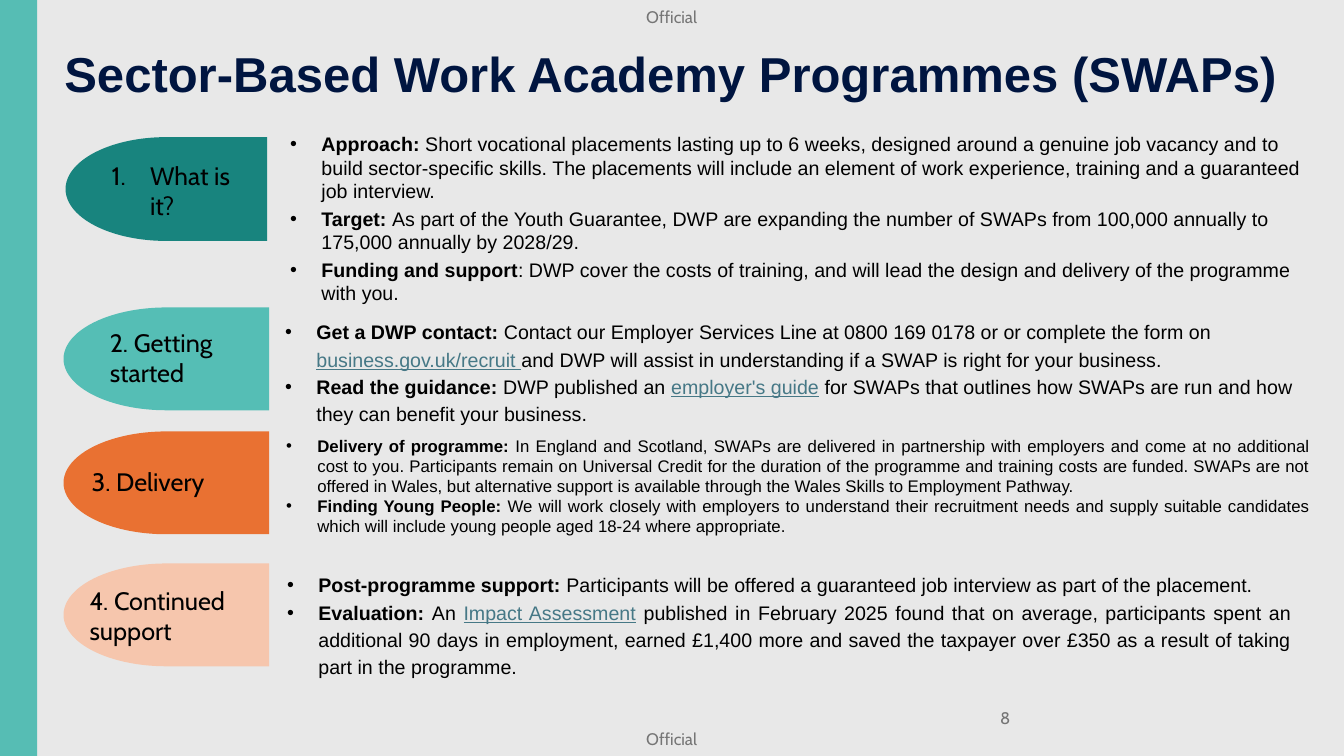
from lxml.etree import SubElement
from pptx import Presentation
from pptx.dml.color import RGBColor
from pptx.enum.shapes import MSO_SHAPE
from pptx.enum.text import MSO_ANCHOR, PP_ALIGN
from pptx.oxml.ns import qn
from pptx.util import Pt

PX = 9144  # 100 px to the inch
BACKGROUND = RGBColor(0xE8, 0xE8, 0xE8)
TEAL = RGBColor(0x56, 0xBD, 0xB4)
DARK_TEAL = RGBColor(0x18, 0x84, 0x7E)
LIGHT_TEAL = RGBColor(0x55, 0xBE, 0xB5)
ORANGE = RGBColor(0xE9, 0x71, 0x32)
PEACH = RGBColor(0xF6, 0xC6, 0xAD)
NAVY = RGBColor(0x00, 0x15, 0x40)
BLACK = RGBColor(0x00, 0x00, 0x00)
GREY = RGBColor(0x75, 0x75, 0x75)
LINK = RGBColor(0x46, 0x78, 0x86)


def add_text(box, text, font_name, size, color, inset=None):
    """Add a wrapping text box with one paragraph and return its frame."""
    textbox = slide.shapes.add_textbox(*[value * PX for value in box])
    frame = textbox.text_frame
    frame.word_wrap = True
    if inset is not None:
        frame.margin_left = frame.margin_right = inset * PX
        frame.margin_top = frame.margin_bottom = inset * PX
    frame.text = text
    font = frame.paragraphs[0].font
    font.name, font.size, font.color.rgb = font_name, Pt(size), color
    return frame


def add_bullet(paragraph, indent, tag, **attributes):
    """Give the paragraph a hanging indent and a bullet or number."""
    properties = paragraph._p.get_or_add_pPr()
    properties.set("marL", str(indent * PX))
    properties.set("indent", str(-indent * PX))
    if tag == "a:buChar":
        SubElement(properties, qn("a:buFont"), typeface="Arial")
    SubElement(properties, qn(tag), **attributes)


presentation = Presentation()
presentation.slide_width = 1333 * PX
presentation.slide_height = 750 * PX
slide = presentation.slides.add_slide(presentation.slide_layouts[6])
slide.background.fill.solid()
slide.background.fill.fore_color.rgb = BACKGROUND

# Side band and the four section tabs
for kind, box, color, rotation in [
    (MSO_SHAPE.RECTANGLE, (0, 0, 37, 750), TEAL, 0),
    (MSO_SHAPE.FLOWCHART_DELAY, (65, 136, 200, 103), DARK_TEAL, 180),
    (MSO_SHAPE.FLOWCHART_DELAY, (63, 305, 204, 102), LIGHT_TEAL, 180),
    (MSO_SHAPE.FLOWCHART_DELAY, (63, 428, 204, 102), ORANGE, 180),
    (MSO_SHAPE.FLOWCHART_DELAY, (63, 559, 204, 102), PEACH, 180),
]:
    shape = slide.shapes.add_shape(kind, *[value * PX for value in box])
    shape.rotation = rotation
    shape.shadow.inherit = False
    shape.fill.solid()
    shape.fill.fore_color.rgb = color
    shape.line.fill.background()

# Title, markings and page number
title = add_text((54, 38, 1257, 71), "Sector-Based Work Academy Programmes (SWAPs)",
                 "Arial", 35, NAVY)
title.paragraphs[0].font.bold = True
for top in (7, 723):
    add_text((641, top, 56, 20), "Official", "Cabin", 12, GREY, inset=0)
page_number = add_text((987, 692, 311, 40), "8", "Cabin", 12, GREY, inset=5)
page_number.vertical_anchor = MSO_ANCHOR.MIDDLE

# Tab labels
for box, label in [
    ((101, 154, 161, 71), "What is it?"),
    ((99, 320, 161, 71), "2. Getting started"),
    ((81, 458, 200, 40), "3. Delivery"),
    ((79, 576, 200, 71), "4. Continued support"),
]:
    frame = add_text(box, label, "Cabin", 18, BLACK)
    if not label[0].isdigit():
        add_bullet(frame.paragraphs[0], 38, "a:buAutoNum", type="arabicPeriod")

# Section bodies: box, size, line spacing, space between, alignment, items.
# In each item the first part is bold, and every second part after that is a link.
sections = [
    ((278, 126, 1031, 183), 14, None, 2.8, PP_ALIGN.LEFT, [
        ["Approach: ",
         "Short vocational placements lasting up to 6 weeks, designed around a genuine "
         "job vacancy and to build sector-specific skills. The placements will include an "
         "element of work experience, training and a guaranteed job interview."],
        ["Target: ",
         "As part of the Youth Guarantee, DWP are expanding the number of SWAPs from "
         "100,000 annually to 175,000 annually by 2028/29."],
        ["Funding and support",
         ": DWP cover the costs of training, and will lead the design and delivery of "
         "the programme with you. "],
    ]),
    ((273, 309, 1036, 120), 14, 19.5, 0, PP_ALIGN.LEFT, [
        ["Get a DWP contact: ",
         "Contact our Employer Services Line at 0800 169 0178 or or complete the form on ",
         "business.gov.uk/recruit ",
         "and DWP will assist in understanding if a SWAP is right for your business."],
        ["Read the guidance: ", "DWP published an ", "employer's guide",
         " for SWAPs that outlines how SWAPs are run and how they can benefit your "
         "business."],
    ]),
    ((274, 427, 1036, 111), 12, None, 0, PP_ALIGN.JUSTIFY, [
        ["Delivery of programme: ",
         "In England and Scotland, SWAPs are delivered in partnership with employers and "
         "come at no additional cost to you. Participants remain on Universal Credit for "
         "the duration of the programme and training costs are funded. SWAPs are not "
         "offered in Wales, but alternative support is available through the Wales Skills "
         "to Employment Pathway."],
        ["Finding Young People: ",
         "We will work closely with employers to understand their recruitment needs and "
         "supply suitable candidates which will include young people aged "
         "18-24 where appropriate."],
    ]),
    ((275, 560, 1016, 120), 14, 19.5, 0, PP_ALIGN.JUSTIFY, [
        ["Post-programme support: ",
         "Participants will be offered a guaranteed job interview as part of the "
         "placement."],
        ["Evaluation: ", "An ", "Impact Assessment",
         " published in February 2025 found that on average, participants spent "
         "an additional 90 days in employment, earned £1,400 more and saved the taxpayer "
         "over £350 as a result of taking part in the programme."],
    ]),
]
for box, size, line_spacing, space_between, alignment, items in sections:
    frame = add_text(box, "", "Arial", size, BLACK)
    for item_index, parts in enumerate(items):
        paragraph = frame.add_paragraph() if item_index else frame.paragraphs[0]
        add_bullet(paragraph, 31, "a:buChar", char="•")
        paragraph.alignment = alignment
        if line_spacing:
            paragraph.line_spacing = Pt(line_spacing)
        if item_index and space_between:
            paragraph.space_before = Pt(space_between)
        for part_index, part in enumerate(parts):
            is_link = part_index == 2
            run = paragraph.add_run()
            run.text = part
            run.font.name, run.font.size = "Arial", Pt(size)
            run.font.bold = part_index == 0
            run.font.underline = is_link
            run.font.color.rgb = LINK if is_link else BLACK

presentation.save("out.pptx")
